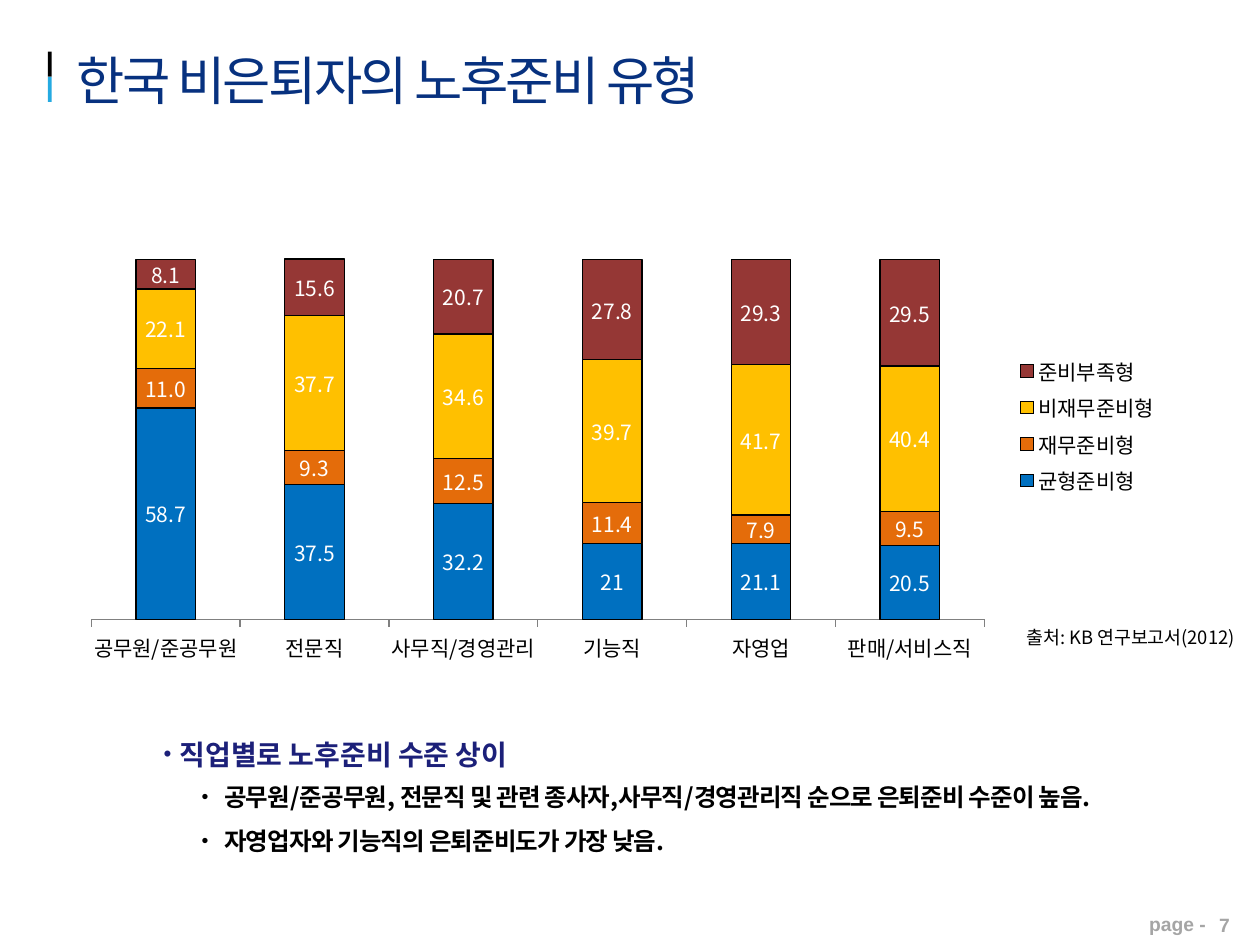
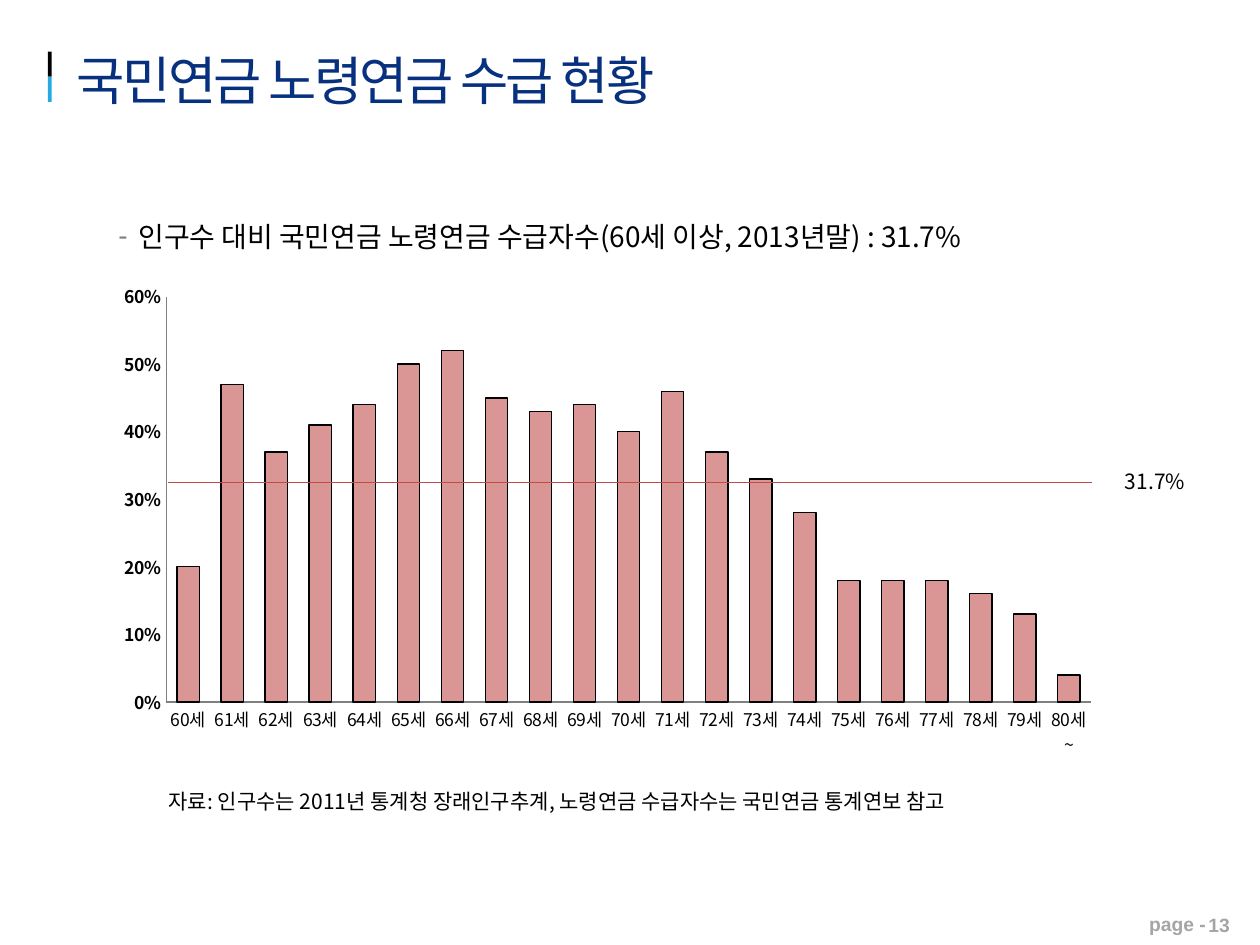
"""Build two slides on retirement readiness and old-age pension receipt in Korea."""
from dataclasses import dataclass
from typing import NamedTuple, Optional

import lxml.etree
import pptx
import pptx.chart.data
import pptx.dml.color
import pptx.enum.chart
import pptx.enum.shapes
import pptx.enum.text
import pptx.oxml.ns
import pptx.util

RGBColor = pptx.dml.color.RGBColor
Align = pptx.enum.text.PP_ALIGN
Anchor = pptx.enum.text.MSO_ANCHOR
ChartType = pptx.enum.chart.XL_CHART_TYPE
TickMark = pptx.enum.chart.XL_TICK_MARK
qn = pptx.oxml.ns.qn

SLIDE_WIDTH = pptx.util.Inches(10)
SLIDE_HEIGHT = pptx.util.Inches(7.5)
COLUMN = SLIDE_WIDTH / 100
ROW = SLIDE_HEIGHT / 75

KOREAN = "Noto Sans CJK KR"
LATIN = "Arial"
BLACK = RGBColor(0x00, 0x00, 0x00)
WHITE = RGBColor(0xFF, 0xFF, 0xFF)
SKY = RGBColor(0x25, 0xAA, 0xE1)
TITLE_NAVY = RGBColor(0x07, 0x31, 0x7F)
HEADING_NAVY = RGBColor(0x1C, 0x20, 0x79)
PAGE_GRAY = RGBColor(0xA5, 0xA5, 0xA5)
AXIS_GRAY = RGBColor(0x80, 0x80, 0x80)
BALANCED_BLUE = RGBColor(0x00, 0x70, 0xC0)
FINANCIAL_ORANGE = RGBColor(0xE4, 0x6C, 0x0A)
NONFINANCIAL_GOLD = RGBColor(0xFF, 0xC0, 0x00)
UNREADY_RED = RGBColor(0x95, 0x37, 0x35)
PENSION_PINK = RGBColor(0xD9, 0x96, 0x94)
AVERAGE_RED = RGBColor(0xBF, 0x4C, 0x48)


class Area(NamedTuple):
    """A place on the grid, in columns and rows."""

    column: float
    row: float
    columns: float
    rows: float

    def box(self) -> tuple:
        """Return left, top, width and height in EMU."""
        return (int(self.column * COLUMN), int(self.row * ROW),
                int(self.columns * COLUMN), int(self.rows * ROW))


class PlotShare(NamedTuple):
    """The inner plot area as shares of its chart."""

    x: float
    y: float
    w: float
    h: float


class Bullet(NamedTuple):
    """A list mark with its text margin and hanging depth in columns."""

    mark: str
    margin: float
    hanging: float
    percent: int = 100
    color: Optional[RGBColor] = None


@dataclass(frozen=True)
class BarSeries:
    """One set of bars and the format of its value labels."""

    name: str
    color: RGBColor
    values: tuple
    label_format: Optional[str] = None


@dataclass(frozen=True)
class Caption:
    """A text on a slide with its place and format."""

    area: Area
    lines: tuple
    style: dict


READINESS = (
    BarSeries("균형준비형", BALANCED_BLUE, (58.7, 37.5, 32.2, 21, 21.1, 20.5), "General"),
    BarSeries("재무준비형", FINANCIAL_ORANGE, (11, 9.3, 12.5, 11.4, 7.9, 9.5), "0.0"),
    BarSeries("비재무준비형", NONFINANCIAL_GOLD, (22.1, 37.7, 34.6, 39.7, 41.7, 40.4), "General"),
    BarSeries("준비부족형", UNREADY_RED, (8.1, 15.6, 20.7, 27.8, 29.3, 29.5), "General"),
)
OCCUPATIONS = ("공무원/준공무원", "전문직", "사무직/경영관리", "기능직", "자영업", "판매/서비스직")
AGES = tuple(f"{age}세" for age in range(60, 80)) + ("80세 ~",)
RECEIPT = BarSeries("Series 1", PENSION_PINK, (
    0.2, 0.47, 0.37, 0.41, 0.44, 0.5, 0.52, 0.45, 0.43, 0.44, 0.4,
    0.46, 0.37, 0.33, 0.28, 0.18, 0.18, 0.18, 0.16, 0.13, 0.04))

READINESS_CAPTIONS = (
    Caption(Area(12, 56.7, 70.5, 5), ("직업별로 노후준비 수준 상이",),
            dict(size=16, color=HEADING_NAVY, bold=True, line_spacing=1.5,
                 bullet=Bullet("•", 1.3, 1.3, 80))),
    Caption(Area(16, 60.9, 79.9, 7.1), (
        "공무원/준공무원, 전문직 및 관련 종사자,사무직/경영관리직 순으로 은퇴준비 수준이 높음.",
        "자영업자와 기능직의 은퇴준비도가 가장 낮음."),
        dict(size=14, bold=True, line_spacing=1.5, spacing=-0.5, insets=(0, 0),
             bullet=Bullet("•", 1.8, 1.8, 80))),
    Caption(Area(81.5, 49.7, 18.5, 2), ("출처: KB 연구보고서(2012)",),
            dict(size=10.5, insets=(0, 0))),
)
RECEIPT_CAPTIONS = (
    Caption(Area(7, 15.6, 89.8, 5),
            ("인구수 대비 국민연금 노령연금 수급자수(60세 이상, 2013년말) : 31.7%",),
            dict(size=16, line_spacing=1.5, bullet=Bullet("-", 3, 1.6, color=AXIS_GRAY))),
    Caption(Area(12.4, 61.1, 87, 4),
            ("자료: 인구수는 2011년 통계청 장래인구추계, 노령연금 수급자수는 국민연금 통계연보 참고",),
            dict(size=12, line_spacing=1.5)),
    Caption(Area(88.3, 36.7, 7.8, 3), ("31.7%",), dict(size=12)),
)


def set_font(font, size: float, *, face: str = KOREAN, color: RGBColor = BLACK,
             bold: bool = False) -> None:
    """Set a font's face for Latin and Korean letters, its size, weight and colour."""
    font.name, font.size, font.bold = face, pptx.util.Pt(size), bold
    font.color.rgb = color
    latin = font._element.find(qn("a:latin"))
    east_asian = lxml.etree.Element(qn("a:ea"), typeface=face)
    latin.addnext(east_asian)


def add_bullet(paragraph, bullet: Bullet) -> None:
    """Give a paragraph a list mark and a hanging indent."""
    properties = paragraph._p.get_or_add_pPr()
    properties.set("marL", str(int(bullet.margin * COLUMN)))
    properties.set("indent", str(-int(bullet.hanging * COLUMN)))
    if bullet.color is not None:
        tint = lxml.etree.SubElement(properties, qn("a:buClr"))
        lxml.etree.SubElement(tint, qn("a:srgbClr"), val=str(bullet.color))
    lxml.etree.SubElement(properties, qn("a:buSzPct"), val=str(bullet.percent * 1000))
    lxml.etree.SubElement(properties, qn("a:buFont"), typeface=LATIN)
    lxml.etree.SubElement(properties, qn("a:buChar"), char=bullet.mark)


def write(frame, *lines: str, size: float, face: str = KOREAN, color: RGBColor = BLACK,
          bold: bool = False, align: Align = Align.LEFT, anchor: Anchor = Anchor.TOP,
          line_spacing: Optional[float] = None, spacing: float = 0,
          insets: tuple = (1, 0.5), bullet: Optional[Bullet] = None) -> None:
    """Fill a text frame with one paragraph a line in one format."""
    frame.word_wrap = True
    frame.auto_size = pptx.enum.text.MSO_AUTO_SIZE.NONE
    frame.vertical_anchor = anchor
    frame.margin_left = frame.margin_right = int(insets[0] * COLUMN)
    frame.margin_top = frame.margin_bottom = int(insets[1] * ROW)
    for index, line in enumerate(lines):
        paragraph = frame.add_paragraph() if index else frame.paragraphs[0]
        if bullet:
            add_bullet(paragraph, bullet)
        paragraph.alignment = align
        if line_spacing:
            paragraph.line_spacing = line_spacing
        run = paragraph.add_run()
        run.text = line
        set_font(run.font, size, face=face, color=color, bold=bold)
        if spacing:
            run.font._element.set("spc", str(int(spacing * 100)))


def add_text(slide, area: Area, *lines: str, **style) -> None:
    """Place a text box on the grid."""
    write(slide.shapes.add_textbox(*area.box()).text_frame, *lines, **style)


def add_page(deck, title: str, number: int, captions: tuple):
    """Add a slide with its title, title mark, page number and captions."""
    slide = deck.slides.add_slide(deck.slide_layouts[5])
    heading = slide.shapes.title
    heading.left, heading.top, heading.width, heading.height = Area(5.1, 3.2, 77.2, 6.3).box()
    write(heading.text_frame, title, size=30, color=TITLE_NAVY, spacing=-1.5,
          anchor=Anchor.MIDDLE)
    for step, color in enumerate((BLACK, SKY)):
        mark = slide.shapes.add_shape(pptx.enum.shapes.MSO_SHAPE.RECTANGLE,
                                      *Area(3.8, 4.1 + 2 * step, 0.3, 2).box())
        mark.shadow.inherit = False
        mark.fill.solid()
        mark.fill.fore_color.rgb = color
        mark.line.fill.background()
    footer = dict(size=11, face=LATIN, color=PAGE_GRAY, bold=True, align=Align.RIGHT)
    add_text(slide, Area(87.7, 71.9, 9, 2.9), "page -", **footer)
    add_text(slide, Area(93.8, 71.4, 4.8, 4), str(number), anchor=Anchor.MIDDLE, **footer)
    for caption in captions:
        add_text(slide, caption.area, *caption.lines, **caption.style)
    return slide


def set_plot_area(chart, share: PlotShare) -> None:
    """Fix the inner plot area of a chart."""
    plot_area = chart._chartSpace.chart.plotArea
    for old in plot_area.findall(qn("c:layout")):
        plot_area.remove(old)
    layout = lxml.etree.Element(qn("c:layout"))
    plot_area.insert(0, layout)
    manual = lxml.etree.SubElement(layout, qn("c:manualLayout"))
    settings = dict(layoutTarget="inner", xMode="edge", yMode="edge", **share._asdict())
    for key, value in settings.items():
        lxml.etree.SubElement(manual, qn(f"c:{key}"), val=str(value))


def add_bars(slide, area: Area, kind: ChartType, categories: tuple, bars: tuple, *,
             size: float, gap: int, maximum: float, plot_share: PlotShare):
    """Add a column chart with outlined bars and no grid lines."""
    data = pptx.chart.data.CategoryChartData()
    data.categories = categories
    for entry in bars:
        data.add_series(entry.name, entry.values)
    chart = slide.shapes.add_chart(kind, *area.box(), data).chart
    chart.has_title = chart.has_legend = False
    set_font(chart.font, size)
    set_plot_area(chart, plot_share)
    plot = chart.plots[0]
    plot.gap_width, plot.vary_by_categories = gap, False
    for series, entry in zip(plot.series, bars):
        series.format.fill.solid()
        series.format.fill.fore_color.rgb = entry.color
        series.format.line.color.rgb = BLACK
        series.format.line.width = pptx.util.Pt(0.75)
        if entry.label_format:
            labels = series.data_labels
            labels.show_value = True
            labels.number_format, labels.number_format_is_linked = entry.label_format, False
            set_font(labels.font, size, color=WHITE)
    values = chart.value_axis
    values.has_major_gridlines = False
    values.minimum_scale, values.maximum_scale = 0, maximum
    for axis in (chart.category_axis, values):
        axis.major_tick_mark = TickMark.NONE
        axis.format.line.color.rgb = AXIS_GRAY
    return chart


def add_readiness_slide(deck) -> None:
    """Show readiness types stacked by occupation."""
    slide = add_page(deck, "한국 비은퇴자의 노후준비 유형", 7, READINESS_CAPTIONS)
    chart = add_bars(slide, Area(5.5, 14.1, 87.5, 39.4), ChartType.COLUMN_STACKED,
                     OCCUPATIONS, READINESS, size=12, gap=150, maximum=120,
                     plot_share=PlotShare(0.02, 0.02, 0.81, 0.87))
    chart.plots[0].overlap = 100
    chart.value_axis.visible = False
    chart.category_axis.major_tick_mark = TickMark.OUTSIDE
    chart.has_legend = True
    chart.legend.position = pptx.enum.chart.XL_LEGEND_POSITION.RIGHT
    chart.legend.include_in_layout = False
    set_font(chart.legend.font, 12)


def add_receipt_slide(deck) -> None:
    """Show the share of pension recipients by age against the average."""
    slide = add_page(deck, "국민연금 노령연금 수급 현황", 13, RECEIPT_CAPTIONS)
    chart = add_bars(slide, Area(6.2, 20.3, 83.3, 41), ChartType.COLUMN_CLUSTERED,
                     AGES, (RECEIPT,), size=10, gap=95, maximum=0.6,
                     plot_share=PlotShare(0.084, 0.079, 0.881, 0.785))
    shares = chart.value_axis
    shares.major_unit = 0.1
    shares.tick_labels.number_format = "0%"
    shares.tick_labels.number_format_is_linked = False
    set_font(shares.tick_labels.font, 10, bold=True)
    left, top, width, _ = Area(13.3, 38.3, 73.4, 0).box()
    average = slide.shapes.add_connector(pptx.enum.shapes.MSO_CONNECTOR.STRAIGHT,
                                         left, top, left + width, top)
    average.line.color.rgb = AVERAGE_RED
    average.line.width = pptx.util.Pt(0.75)
    lxml.etree.SubElement(average._element.spPr, qn("a:effectLst"))


def main() -> None:
    """Build and save the presentation."""
    deck = pptx.Presentation()
    deck.slide_width, deck.slide_height = SLIDE_WIDTH, SLIDE_HEIGHT
    add_readiness_slide(deck)
    add_receipt_slide(deck)
    deck.save("out.pptx")


if __name__ == "__main__":
    main()
